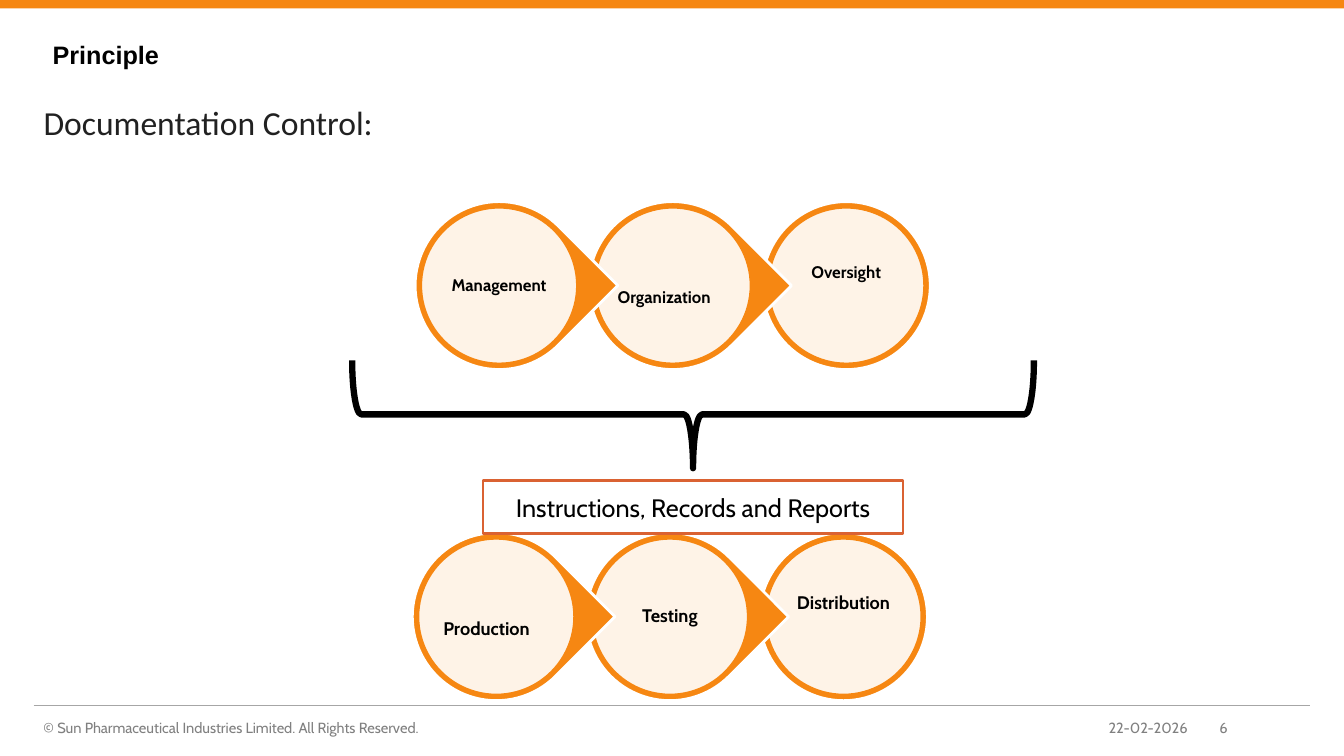
"""Builds the Documentation Control slide: two process chains joined by a brace."""
from lxml.etree import SubElement
from pptx import Presentation
from pptx.dml.color import RGBColor
from pptx.enum.shapes import MSO_CONNECTOR, MSO_SHAPE
from pptx.enum.text import MSO_ANCHOR, PP_ALIGN
from pptx.oxml.ns import qn
from pptx.util import Pt

COLORS = {
    "orange": "F68712", "rust": "DA6232", "white": "FFFFFF", "black": "000000",
    "ink": "212121", "gray": "808080", "rule": "A6A6A6",
}

deck = Presentation()
deck.slide_width, deck.slide_height = Pt(960), Pt(540)
slide = deck.slides.add_slide(deck.slide_layouts[6])


def write(text, box, size, font="Cabin", color="black", bold=False,
          align=PP_ALIGN.LEFT, anchor=MSO_ANCHOR.TOP, inset=None, spacing=None):
    frame = slide.shapes.add_textbox(*map(Pt, box)).text_frame
    frame.word_wrap = True
    frame.vertical_anchor = anchor
    if inset is not None:
        frame.margin_left = frame.margin_right = Pt(inset)
        frame.margin_top = frame.margin_bottom = Pt(inset)
    paragraph = frame.paragraphs[0]
    paragraph.text = text
    paragraph.alignment = align
    paragraph.line_spacing = spacing
    paragraph.font.name = font
    paragraph.font.size = Pt(size)
    paragraph.font.bold = bold
    paragraph.font.color.rgb = RGBColor.from_string(COLORS[color])


def draw(kind, box, fill=None, line=None, width=2):
    shape = slide.shapes.add_shape(kind, *map(Pt, box))
    shape.shadow.inherit = False
    if fill:
        shape.fill.solid()
        shape.fill.fore_color.rgb = RGBColor.from_string(COLORS[fill])
    else:
        shape.fill.background()
    if line:
        shape.line.color.rgb = RGBColor.from_string(COLORS[line])
        shape.line.width = Pt(width)
    else:
        shape.line.fill.background()
    return shape


draw(MSO_SHAPE.RECTANGLE, (0, 0, 960, 6), fill="orange")
footer_rule = slide.shapes.add_connector(
    MSO_CONNECTOR.STRAIGHT, Pt(24), Pt(504), Pt(936), Pt(504))
footer_rule.line.color.rgb = RGBColor.from_string(COLORS["rule"])
footer_rule.line.width = Pt(0.25)
SubElement(footer_rule.element.spPr, qn("a:effectLst"))

write("Principle", (30.5, 24.5, 881, 50), 18, font="Arial", bold=True)
write("Documentation Control:", (24, 69, 888, 58), 24, font="Calibri", color="ink")
write("© Sun Pharmaceutical Industries Limited. All Rights Reserved.",
      (24, 510, 576, 16.5), 10.5, color="gray")
write("22-02-2026", (608, 510, 247.5, 16.5), 10.5, color="gray", align=PP_ALIGN.RIGHT)
write("6", (864, 510, 72, 16.5), 10.5, color="gray")

brace = draw(MSO_SHAPE.RIGHT_BRACE, (456.5, 52.5, 77, 487), line="black", width=4.5)
brace.rotation = 90

chains = [
    (296.5, 144, 12, [("Management", 0, 0), ("Organization", -6, 9), ("Oversight", 0, -9)]),
    (294.5, 380.5, 13, [("Production", -7, 9), ("Testing", 0, 0), ("Distribution", 0, -9)]),
]
STEP_PITCH = 124
for chain_left, top, size, steps in chains:
    for index, (label, shift_x, shift_y) in reversed(list(enumerate(steps))):
        left = chain_left + index * STEP_PITCH
        is_last = index == len(steps) - 1
        outer = draw(MSO_SHAPE.OVAL if is_last else MSO_SHAPE.TEAR,
                     (left, top, 120, 120), fill="orange", line="white")
        if not is_last:
            outer.rotation = 45
        disc = draw(MSO_SHAPE.OVAL, (left + 4, top + 4, 112, 112),
                    fill="white", line="orange")
        disc_color = disc.element.spPr.find(qn("a:solidFill")).find(qn("a:srgbClr"))
        SubElement(disc_color, qn("a:alpha"), val="90000")
        write(label, (left + 20 + shift_x, top + 20 + shift_y, 80, 80), size, bold=True,
              align=PP_ALIGN.CENTER, anchor=MSO_ANCHOR.MIDDLE, inset=1.5, spacing=0.9)

outcome = (345, 343.5, 300, 37.5)
draw(MSO_SHAPE.RECTANGLE, outcome, fill="white", line="rust")
write("Instructions, Records and Reports", outcome, 18,
      align=PP_ALIGN.CENTER, anchor=MSO_ANCHOR.MIDDLE)

deck.save("out.pptx")
